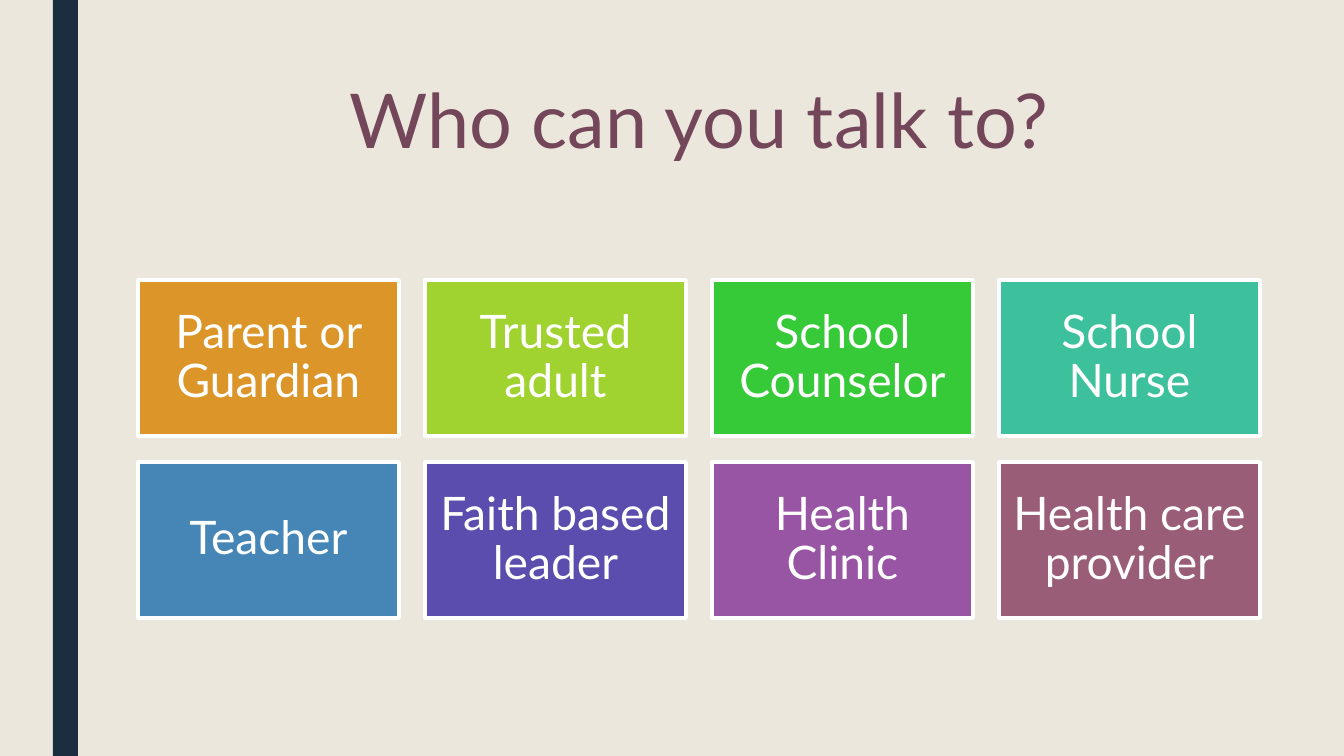
from pptx import Presentation
from pptx.dml.color import RGBColor
from pptx.enum.shapes import MSO_SHAPE
from pptx.enum.text import MSO_ANCHOR, PP_ALIGN
from pptx.util import Pt

RECT = MSO_SHAPE.RECTANGLE
MIDDLE = MSO_ANCHOR.MIDDLE
CENTER = PP_ALIGN.CENTER

# Content
TITLE = "Who can you talk to?"
PEOPLE = [
    ("Parent or Guardian", "DC9528"),
    ("Trusted adult", "A0D32F"),
    ("School Counselor", "36CA39"),
    ("School Nurse", "3DC19D"),
    ("Teacher", "4586B7"),
    ("Faith based leader", "5B4DAD"),
    ("Health Clinic", "9855A4"),
    ("Health care provider", "9A5D78"),
]

# Layout in px
SLIDE_W, SLIDE_H = 1344, 756
COLS = 4
LEFT, TOP = 138, 280
CARD_W, CARD_H = 261, 156
GAP = 26
GRID_W = COLS * CARD_W + (COLS - 1) * GAP
PX = 9071.43  # EMU per px


def px(n):
    return round(n * PX)


def rgb(value):
    return RGBColor.from_string(value)


def add_rect(x, y, w, h, fill, line=None):
    sp = s.shapes.add_shape(RECT, px(x), px(y), px(w), px(h))
    sp.shadow.inherit = False
    sp.fill.solid()
    sp.fill.fore_color.rgb = rgb(fill)
    if line:
        sp.line.color.rgb = rgb(line)
        sp.line.width = Pt(2.75)
    else:
        sp.line.fill.background()
    return sp


def write(sp, text, size, color, spacing=0.9, inset=13):
    tf = sp.text_frame
    tf.word_wrap = True
    tf.vertical_anchor = MIDDLE
    tf.margin_left = tf.margin_right = px(inset)
    tf.margin_top = tf.margin_bottom = px(inset)
    p = tf.paragraphs[0]
    p.alignment = CENTER
    p.line_spacing = spacing
    r = p.add_run()
    r.text = text
    r.font.name = "Lato"
    r.font.size = Pt(size)
    r.font.color.rgb = rgb(color)


prs = Presentation()
prs.slide_width, prs.slide_height = px(SLIDE_W), px(SLIDE_H)
s = prs.slides.add_slide(prs.slide_layouts[6])

# Background and side bar
s.background.fill.solid()
s.background.fill.fore_color.rgb = rgb("EBE7DD")
add_rect(53, 0, 25, SLIDE_H, "1A2E40")

# Title
title = s.shapes.add_textbox(px(LEFT), px(42), px(GRID_W), px(164))
write(title, TITLE, 54, "73465A", spacing=0.89, inset=5)

# Grid of people
for i, (name, fill) in enumerate(PEOPLE):
    row, col = divmod(i, COLS)
    x = LEFT + col * (CARD_W + GAP)
    y = TOP + row * (CARD_H + GAP)
    card = add_rect(x, y, CARD_W, CARD_H, fill, line="FFFFFF")
    write(card, name, 33, "FFFFFF")

prs.save("out.pptx")
